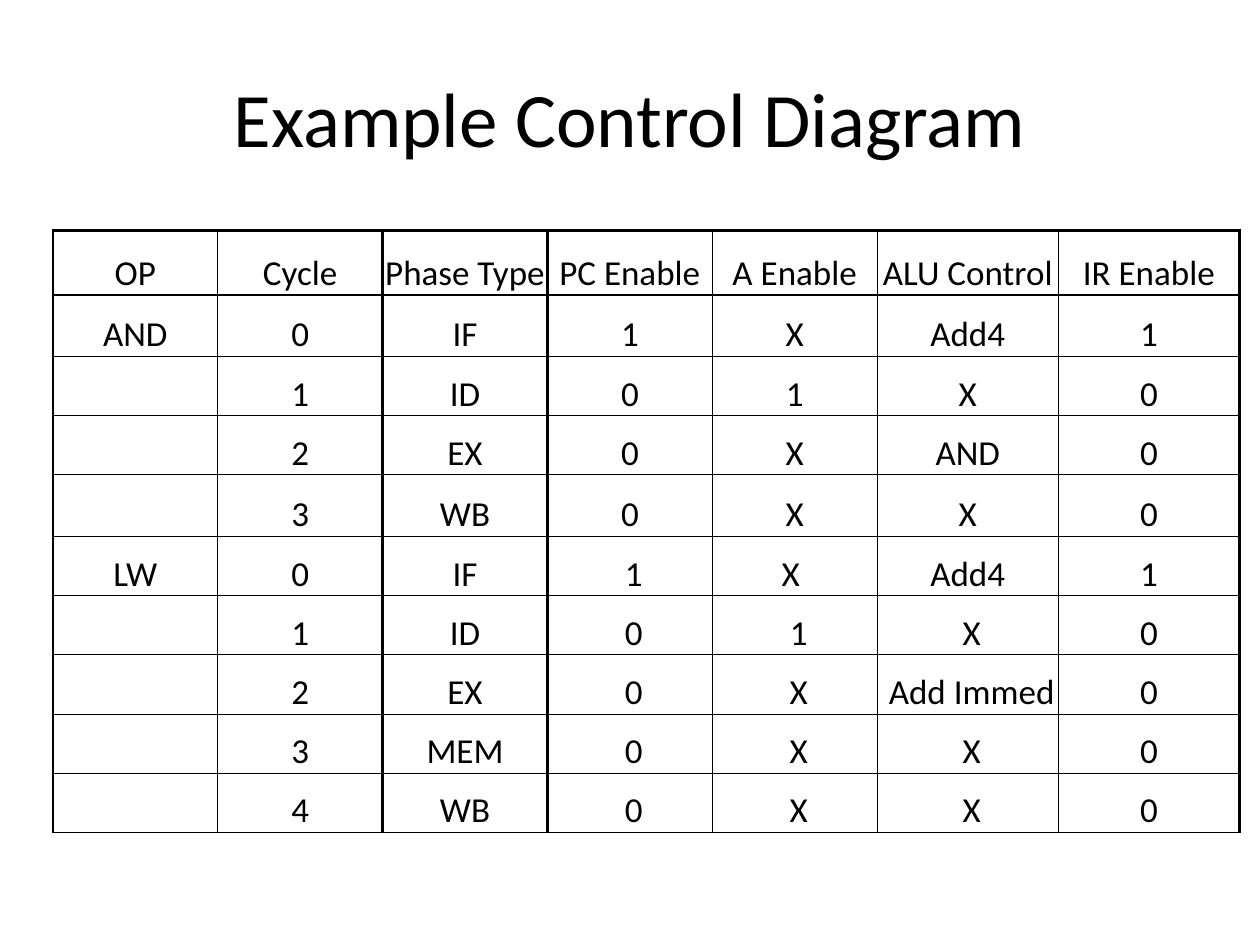
from lxml.etree import SubElement
from pptx import Presentation
from pptx.dml.color import RGBColor
from pptx.enum.text import MSO_ANCHOR, PP_ALIGN
from pptx.oxml.ns import qn
from pptx.util import Inches, Pt

SLIDE_WIDTH, SLIDE_HEIGHT = Inches(10), Inches(7.5)
FONT = "Calibri"
INK = "000000"

# Box: left, top, width, height as shares of the slide
TITLE_BOX = (0.05, 0.04, 0.9, 1 / 6)
TABLE_BOX = (0.042, 0.244, 0.942, 0.637)

COLUMN_WEIGHTS = [1.31] * 5 + [1.44] * 2
ROW_WEIGHTS = [0.51, 0.49, 0.47, 0.47, 0.49] + [0.47] * 5

# Rules in points, by grid line number; all others are thin
THIN = 0.5
COLUMN_RULES = {0: 1.5, 2: 1.5, 3: 1.5, 7: 1.5}
ROW_RULES = {0: 1.5, 1: 1.5, 5: 1}

CONTROL_ROWS = [
    ["OP", "Cycle", "Phase Type", "PC Enable", "A Enable", "ALU Control", "IR Enable"],
    ["AND", "0", "IF", "1", "X", "Add4", "1"],
    ["", "1", "ID", "0", "1", "X", "0"],
    ["", "2", "EX", "0", "X", "AND", "0"],
    ["", "3", "WB", "0", "X", "X", "0"],
    ["LW", "0", "IF", " 1", "X ", "Add4", "1"],
    ["", "1", "ID", " 0", " 1", " X", "0"],
    ["", "2", "EX", " 0", " X", " Add Immed", "0"],
    ["", "3", "MEM", " 0", " X", " X", "0"],
    ["", "4", "WB", " 0", " X", " X", "0"],
]


def color(hex_code):
    return RGBColor.from_string(hex_code)


def place(box):
    left, top, width, height = box
    return (int(left * SLIDE_WIDTH), int(top * SLIDE_HEIGHT),
            int(width * SLIDE_WIDTH), int(height * SLIDE_HEIGHT))


def write(frame, text, size):
    para = frame.paragraphs[0]
    para.alignment = PP_ALIGN.CENTER
    if text:
        span = para.add_run()
        span.text = text
        span.font.name = FONT
        span.font.size = Pt(size)
        span.font.color.rgb = color(INK)


def share_out(tracks, weights, total, attribute):
    for track, weight in zip(tracks, weights):
        setattr(track, attribute, int(total * weight / sum(weights)))


def draw_borders(cell, row, column):
    # Borders come before the fill in the cell properties
    sides = {
        "a:lnL": COLUMN_RULES.get(column, THIN),
        "a:lnR": COLUMN_RULES.get(column + 1, THIN),
        "a:lnT": ROW_RULES.get(row, THIN),
        "a:lnB": ROW_RULES.get(row + 1, THIN),
    }
    properties = cell._tc.get_or_add_tcPr()
    for tag, points in sides.items():
        line = SubElement(properties, qn(tag), w=str(int(Pt(points))))
        fill = SubElement(line, qn("a:solidFill"))
        SubElement(fill, qn("a:srgbClr"), val=INK)


def add_title(page, box):
    frame = page.shapes.add_textbox(*place(box)).text_frame
    frame.word_wrap = True
    frame.vertical_anchor = MSO_ANCHOR.MIDDLE
    write(frame, "Example Control Diagram", 44)


def add_control_table(page, box):
    left, top, width, height = place(box)
    table = page.shapes.add_table(len(CONTROL_ROWS), len(COLUMN_WEIGHTS),
                                  left, top, width, height).table
    table.first_row = table.horz_banding = False
    share_out(table.columns, COLUMN_WEIGHTS, width, "width")
    share_out(table.rows, ROW_WEIGHTS, height, "height")
    for row, texts in enumerate(CONTROL_ROWS):
        for column, text in enumerate(texts):
            cell = table.cell(row, column)
            cell.vertical_anchor = MSO_ANCHOR.BOTTOM
            cell.margin_left = cell.margin_right = cell.margin_top = Inches(0.01)
            cell.margin_bottom = 0
            draw_borders(cell, row, column)
            cell.fill.background()
            write(cell.text_frame, text, 20)


def main():
    deck = Presentation()
    deck.slide_width, deck.slide_height = SLIDE_WIDTH, SLIDE_HEIGHT
    page = deck.slides.add_slide(deck.slide_layouts[6])
    add_title(page, TITLE_BOX)
    add_control_table(page, TABLE_BOX)
    deck.save("out.pptx")


if __name__ == "__main__":
    main()
